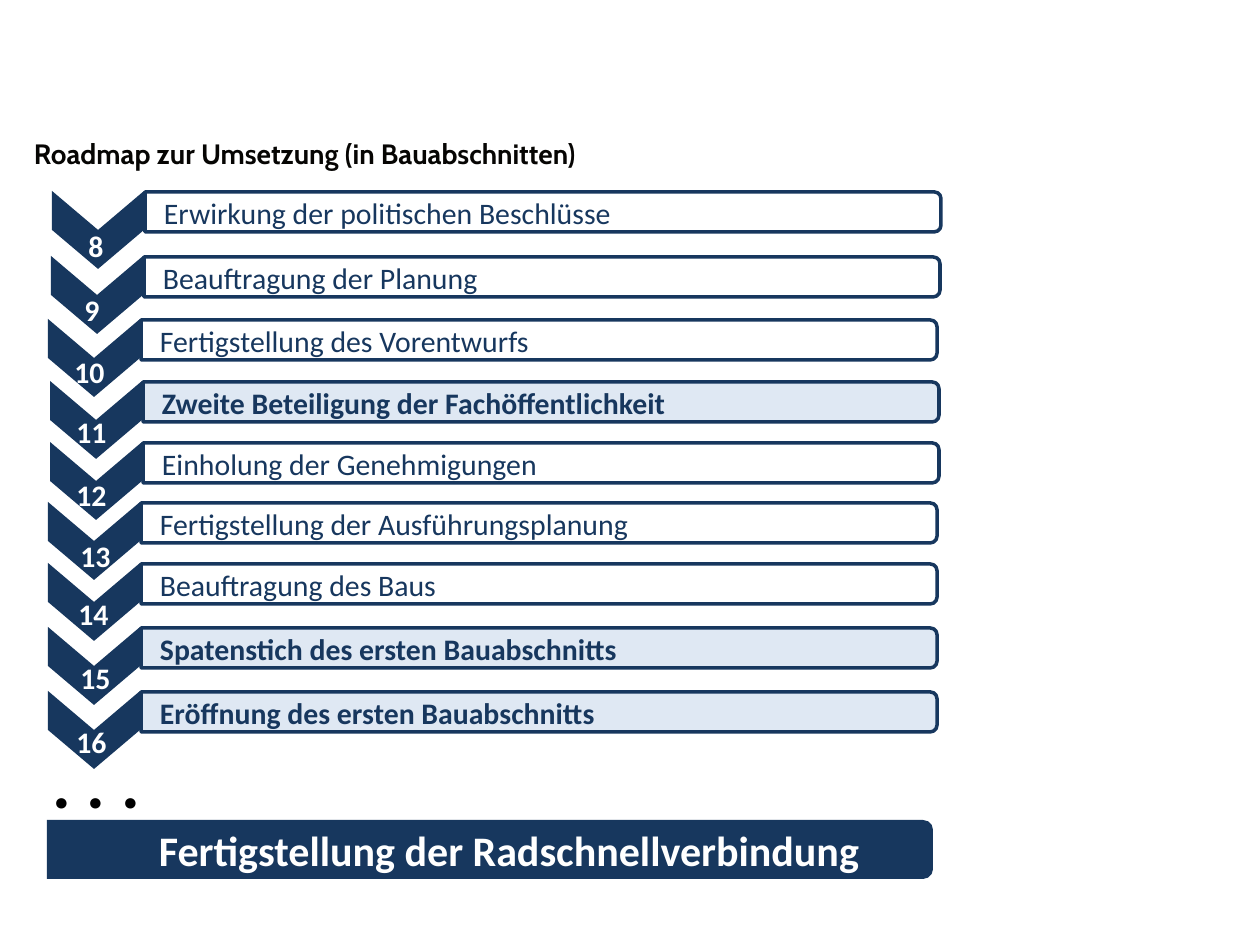
import pptx
import pptx.util
import pptx.dml.color
import pptx.enum.shapes
import pptx.enum.text
import pptx.oxml.ns
from lxml import etree

EMU_PER_PX = 914400 / 126
COLORS = {"navy": "17375E", "pale": "DCE6F2", "white": "FFFFFF",
          "black": "000000", "ink": "060503"}
SHAPES = pptx.enum.shapes.MSO_SHAPE

# chevron left, chevron top, number left, number top, text, highlighted
STEPS = [
    (52, 191, 76, 222, "Erwirkung der politischen Beschlüsse", False),
    (51, 256, 72, 286, "Beauftragung der Planung", False),
    (48, 319, 62, 348, "Fertigstellung des Vorentwurfs", False),
    (50, 381, 64, 408, "Zweite Beteiligung der Fachöffentlichkeit", True),
    (50, 442, 64, 471, "Einholung der Genehmigungen", False),
    (48, 502, 68, 532, "Fertigstellung der Ausführungsplanung", False),
    (48, 563, 66, 590, "Beauftragung des Baus", False),
    (48, 627, 68, 654, "Spatenstich des ersten Bauabschnitts", True),
    (48, 691, 64, 718, "Eröffnung des ersten Bauabschnitts", True),
]
FIRST_NUMBER = 8


def px(length):
    return pptx.util.Emu(round(length * EMU_PER_PX))


def rgb(name):
    return pptx.dml.color.RGBColor.from_string(COLORS[name])


def add_turned_shape(page, kind, left, top, width, height, fill):
    """Add a shape turned by 90 degrees that covers the given area."""
    shift = (width - height) / 2
    shape = page.shapes.add_shape(kind, px(left + shift), px(top - shift),
                                  px(height), px(width))
    shape.rotation = 90
    shape.shadow.inherit = False
    shape.fill.solid()
    shape.fill.fore_color.rgb = rgb(fill)
    shape.line.fill.background()
    return shape


def add_outline(shape):
    """Give the shape a navy outline and a slightly transparent fill."""
    shape.line.color.rgb = rgb("navy")
    shape.line.width = pptx.util.Pt(2)
    color = shape._element.spPr.find(".//" + pptx.oxml.ns.qn("a:srgbClr"))
    etree.SubElement(color, pptx.oxml.ns.qn("a:alpha"), val="90000")


def add_text(page, text, left, top, width, height, size, color,
             bold=True, font="Calibri"):
    box = page.shapes.add_textbox(px(left), px(top), px(width), px(height))
    frame = box.text_frame
    frame.text = text
    frame.word_wrap = True
    style = frame.paragraphs[0].runs[0].font
    style.name = font
    style.size = pptx.util.Pt(size)
    style.bold = bold
    style.color.rgb = rgb(color)
    return frame


def set_margins(frame, left, others):
    frame.margin_left = px(left)
    frame.margin_top = frame.margin_right = frame.margin_bottom = px(others)


def add_title(page, text):
    frame = add_text(page, text, 34, 125, 1201, 47, 16, "ink", font="Cabin")
    set_margins(frame, 0, 0)
    frame.paragraphs[0].line_spacing = pptx.util.Pt(26)


def add_fitted_text(page, text, left, top, width, height, size, color):
    frame = add_text(page, text, left, top, width, height, size, color)
    frame.word_wrap = False
    frame.auto_size = pptx.enum.text.MSO_AUTO_SIZE.SHAPE_TO_FIT_TEXT


def add_bar_text(page, text, left, top, height, size, color, bold):
    frame = add_text(page, text, left, top, 821, height, size, color, bold)
    set_margins(frame, 20, 1)
    frame.vertical_anchor = pptx.enum.text.MSO_ANCHOR.MIDDLE
    frame.paragraphs[0].line_spacing = 0.9


def add_step(page, number, left, top, number_left, number_top, text, highlighted):
    add_turned_shape(page, SHAPES.CHEVRON, left, top, 92, 78, "navy")
    label = str(number)
    add_fitted_text(page, label, number_left, number_top,
                    26 + 16 * len(label), 39, 17, "white")
    bar = add_turned_shape(page, SHAPES.ROUND_2_SAME_RECTANGLE, left + 93, top + 1,
                           796, 40, "pale" if highlighted else "white")
    add_outline(bar)
    add_bar_text(page, text, left + 92, top - 1, 50, 17, "navy", highlighted)


def main():
    deck = pptx.Presentation()
    deck.slide_width, deck.slide_height = px(1260), px(945)
    page = deck.slides.add_slide(deck.slide_layouts[6])
    add_title(page, "Roadmap zur Umsetzung (in Bauabschnitten)")
    for number, step in enumerate(STEPS, FIRST_NUMBER):
        add_step(page, number, *step)
    add_turned_shape(page, SHAPES.ROUND_2_SAME_RECTANGLE, 47, 820, 886, 59, "navy")
    add_bar_text(page, "Fertigstellung der Radschnellverbindung",
                 139, 818, 69, 24, "white", True)
    add_fitted_text(page, ". . .", 40, 732, 113, 79, 40, "black")
    deck.save("out.pptx")


if __name__ == "__main__":
    main()
